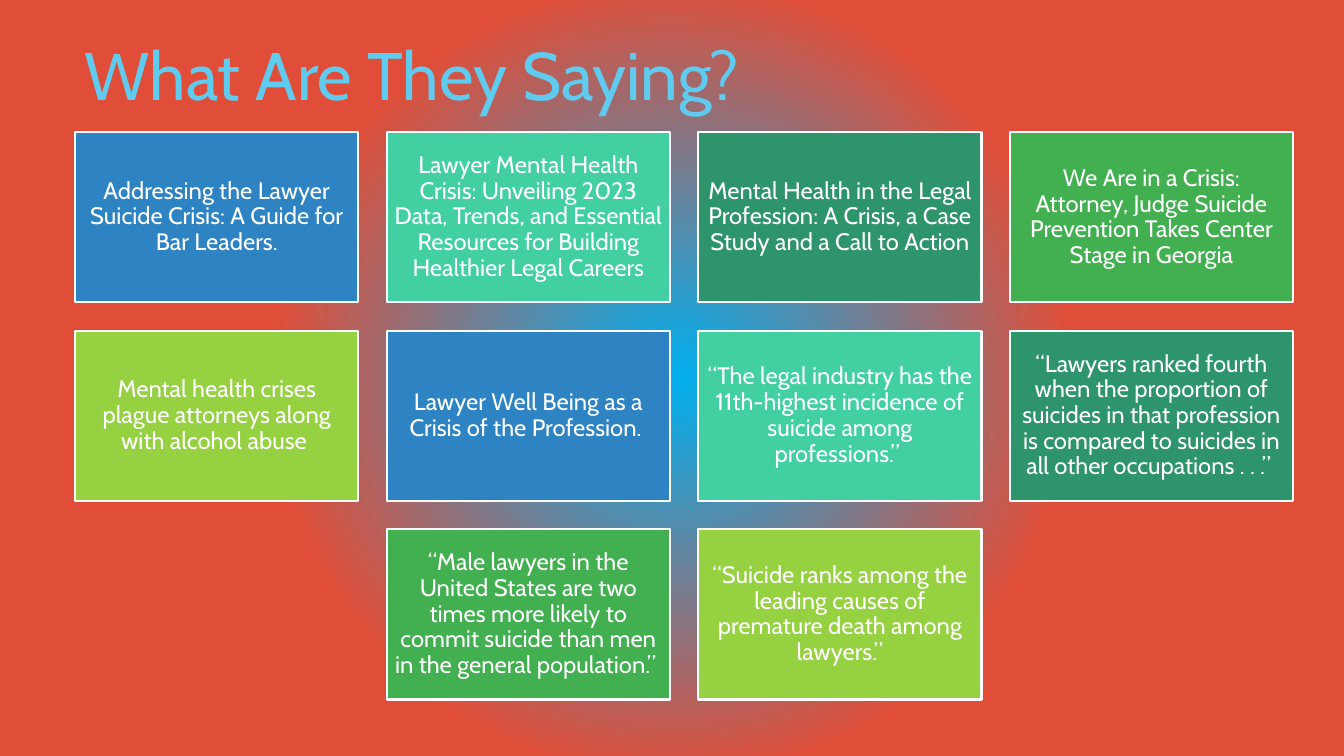
from dataclasses import dataclass

from lxml.etree import SubElement
from pptx import Presentation
from pptx.dml.color import RGBColor
from pptx.enum.shapes import MSO_SHAPE
from pptx.enum.text import MSO_ANCHOR, PP_ALIGN
from pptx.oxml.ns import qn
from pptx.util import Inches, Pt


@dataclass(frozen=True)
class Theme:
    """Colours, font and type sizes of the slide."""

    font: str = "Cabin"
    title_size: int = 48
    card_size: int = 17
    title: str = "5FCBEF"
    white: str = "FFFFFF"
    glow: str = "00B0F0"
    backdrop: str = "E04E39"
    cards: tuple = ("2E83C3", "42D0A2", "2E946B", "42B051", "96D141")


THEME = Theme()
COLUMNS = 4
CARD_WIDTH, CARD_HEIGHT = 2.81, 1.69
GAP = 0.28
TITLE = "What Are They Saying?"
SAYINGS = [
    "Addressing the Lawyer Suicide Crisis: A Guide for Bar Leaders.",
    "Lawyer Mental Health Crisis: Unveiling 2023 Data, Trends, and Essential "
    "Resources for Building Healthier Legal Careers",
    "Mental Health in the Legal Profession: A Crisis, a Case Study and a Call to Action",
    "We Are in a Crisis: Attorney, Judge Suicide Prevention Takes Center Stage in Georgia",
    "Mental health crises plague attorneys along with alcohol abuse ",
    "Lawyer Well Being as a Crisis of the Profession. ",
    "“The legal industry has the 11th-highest incidence of suicide among professions.” ",
    "“Lawyers ranked fourth when the proportion of suicides in that profession "
    "is compared to suicides in all other occupations . . .” ",
    "“Male lawyers in the United States are two times more likely to commit suicide "
    "than men in the general population.”  ",
    "“Suicide ranks among the leading causes of premature death among lawyers.”",
]


def apply(target, formats):
    """Set each attribute of the target from a dict of format values."""
    for name, value in formats.items():
        setattr(target, name, value)


def write(frame, text, size, color, align):
    """Write one formatted paragraph into a text frame."""
    apply(frame, {"word_wrap": True, "vertical_anchor": MSO_ANCHOR.MIDDLE})
    para = frame.paragraphs[0]
    apply(para, {"alignment": align, "line_spacing": 0.9})
    span = para.add_run()
    span.text = text
    apply(span.font, {"name": THEME.font, "size": Pt(size)})
    span.font.color.rgb = RGBColor.from_string(color)


def paint_background(page):
    """Fill the page with a circular glow from its centre."""
    fill = page.background.fill
    fill.gradient()
    stops = ((0, THEME.glow), (0.52, THEME.backdrop))
    for stop, (position, color) in zip(fill.gradient_stops, stops):
        stop.position = position
        stop.color.rgb = RGBColor.from_string(color)
    gradient = next(page.element.iter(qn("a:gradFill")))
    gradient.remove(gradient.find(qn("a:lin")))
    circle = SubElement(gradient, qn("a:path"), {"path": "circle"})
    SubElement(circle, qn("a:fillToRect"), dict.fromkeys("ltrb", "50000"))


def place_title(page, left, top, width, height):
    """Place the title placeholder in the given box."""
    title = page.shapes.title
    apply(title, {"left": Inches(left), "top": Inches(top),
                  "width": Inches(width), "height": Inches(height)})
    write(title.text_frame, TITLE, THEME.title_size, THEME.title, PP_ALIGN.LEFT)


def add_card(page, text, color, left, top):
    """Add one coloured card with centred text."""
    card = page.shapes.add_shape(MSO_SHAPE.RECTANGLE, Inches(left), Inches(top),
                                 Inches(CARD_WIDTH), Inches(CARD_HEIGHT))
    card.shadow.inherit = False
    card.fill.solid()
    card.fill.fore_color.rgb = RGBColor.from_string(color)
    card.line.color.rgb = RGBColor.from_string(THEME.white)
    card.line.width = Pt(1.5)
    sides = ("left", "top", "right", "bottom")
    apply(card.text_frame, {f"margin_{side}": Inches(0.07) for side in sides})
    write(card.text_frame, text, THEME.card_size, THEME.white, PP_ALIGN.CENTER)


def add_cards(page, left, top, width):
    """Lay the cards out in rows, each centred in the given width."""
    for start in range(0, len(SAYINGS), COLUMNS):
        row = SAYINGS[start:start + COLUMNS]
        row_width = len(row) * (CARD_WIDTH + GAP) - GAP
        row_left = left + (width - row_width) / 2
        row_top = top + start // COLUMNS * (CARD_HEIGHT + GAP)
        for column, text in enumerate(row):
            color = THEME.cards[(start + column) % len(THEME.cards)]
            add_card(page, text, color, row_left + column * (CARD_WIDTH + GAP), row_top)


def main():
    """Build and save the deck."""
    deck = Presentation()
    apply(deck, {"slide_width": Inches(13.33), "slide_height": Inches(7.5)})
    page = deck.slides.add_slide(deck.slide_layouts[5])
    paint_background(page)
    place_title(page, 0.74, 0.25, 9.4, 1.06)
    add_cards(page, 0.74, 1.31, 12.09)
    deck.save("out.pptx")


if __name__ == "__main__":
    main()
